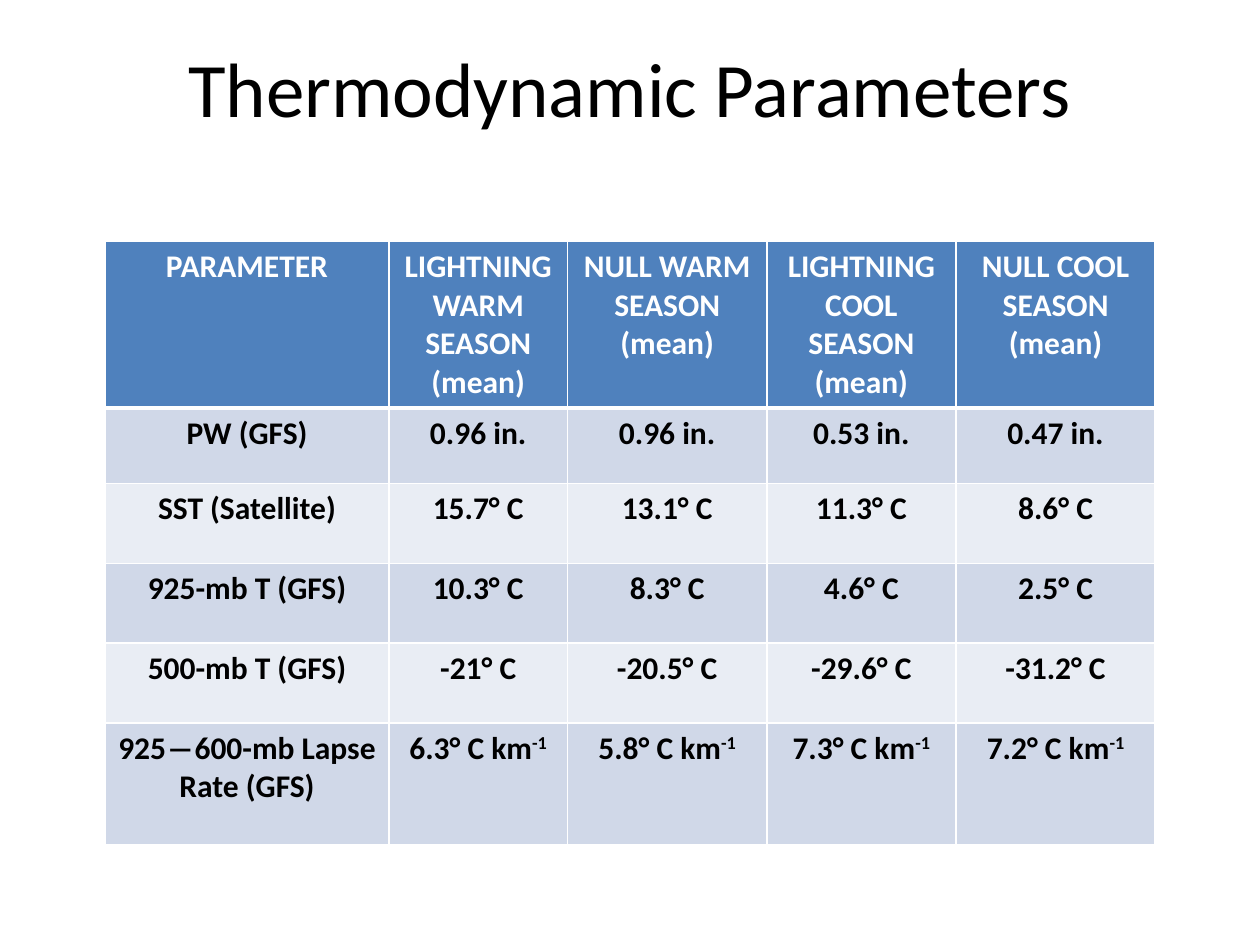
from lxml import etree
from pptx import Presentation
from pptx.dml.color import RGBColor
from pptx.enum.text import MSO_ANCHOR, PP_ALIGN
from pptx.oxml.ns import qn
from pptx.util import Cm, Pt

CENTER = PP_ALIGN.CENTER
MIDDLE = MSO_ANCHOR.MIDDLE
TITLE_ONLY = 5

WHITE, BLACK = "FFFFFF", "000000"
HEADER_BLUE = "4F81BD"
BANDS = ("D0D8E8", "E9EDF4")
THIN, THICK = 1, 3

HEADINGS = ["PARAMETER", "LIGHTNING WARM SEASON\n(mean)", "NULL WARM SEASON (mean)",
            "LIGHTNING COOL SEASON (mean)", "NULL COOL SEASON (mean)"]
# A caret starts the superscript part of a value
READINGS = [
    ["PW (GFS)", "0.96 in.", "0.96 in.", "0.53 in.", "0.47 in."],
    ["SST (Satellite)", "15.7° C", "13.1° C", "11.3° C", "8.6° C"],
    ["925-mb T (GFS)", "10.3° C", "8.3° C", "4.6° C", "2.5° C"],
    ["500-mb T (GFS)", "-21° C", "-20.5° C", "-29.6° C", "-31.2° C"],
    ["925―600-mb Lapse Rate (GFS)"]
    + [f"{rate}° C km^-1" for rate in ("6.3", "5.8", "7.3", "7.2")],
]
COLUMN_WIDTHS = [5.72, 3.6, 4.02, 3.81, 4.02]
ROW_HEIGHTS = [3.18, 1.52, 1.61, 1.61, 1.61, 2.46]


def color(hex_string):
    return RGBColor.from_string(hex_string)


class SlideBuilder:
    """Holds the text style and the current slide."""

    def __init__(self, slide, font_name="Calibri"):
        self.slide = slide
        self.font_name = font_name

    def add_text(self, paragraph, text, size, bold, text_color):
        paragraph.alignment = CENTER
        style = {"name": self.font_name, "size": Pt(size), "bold": bold}
        for position, part in enumerate(text.split("^")):
            run = paragraph.add_run()
            run.text = part
            for attribute, value in style.items():
                setattr(run.font, attribute, value)
            run.font.color.rgb = color(text_color)
            if position:
                run.font._element.set("baseline", "30000")

    def title(self, text, left, top, width, height):
        heading = self.slide.shapes.title
        box = {"left": left, "top": top, "width": width, "height": height}
        for attribute, value in box.items():
            setattr(heading, attribute, Cm(value))
        heading.text_frame.vertical_anchor = MIDDLE
        self.add_text(heading.text_frame.paragraphs[0], text, 44, False, BLACK)

    def borders(self, cell, widths):
        properties = cell._tc.get_or_add_tcPr()
        for side, width in widths.items():
            line = etree.SubElement(properties, qn(f"a:ln{side}"), w=str(Pt(width)))
            fill = etree.SubElement(line, qn("a:solidFill"))
            etree.SubElement(fill, qn("a:srgbClr"), val=WHITE)

    def cell(self, cell, text, fill, text_color, border_widths):
        self.borders(cell, border_widths)
        cell.fill.solid()
        cell.fill.fore_color.rgb = color(fill)
        frame = cell.text_frame
        for index, line in enumerate(text.split("\n")):
            paragraph = frame.add_paragraph() if index else frame.paragraphs[0]
            self.add_text(paragraph, line, 18, True, text_color)

    def table(self, rows, left, top, widths, heights):
        table = self.slide.shapes.add_table(
            len(rows), len(widths), Cm(left), Cm(top),
            Cm(sum(widths)), Cm(sum(heights))).table
        for column, width in zip(table.columns, widths):
            column.width = Cm(width)
        for row, height in zip(table.rows, heights):
            row.height = Cm(height)
        for r, texts in enumerate(rows):
            fill = BANDS[(r - 1) % 2] if r else HEADER_BLUE
            text_color = BLACK if r else WHITE
            # The line under the header is thick
            border_widths = {"L": THIN, "R": THIN,
                             "T": THICK if r == 1 else THIN,
                             "B": THICK if r == 0 else THIN}
            for c, text in enumerate(texts):
                self.cell(table.cell(r, c), text, fill, text_color, border_widths)


def main():
    presentation = Presentation()
    presentation.slide_width, presentation.slide_height = Cm(25.4), Cm(19.05)
    layout = presentation.slide_layouts[TITLE_ONLY]
    builder = SlideBuilder(presentation.slides.add_slide(layout))

    # Title
    builder.title("Thermodynamic Parameters", 1.27, 0.64, 22.86, 2.2)

    # Seasonal means of each parameter
    builder.table([HEADINGS] + READINGS, 2.12, 4.87, COLUMN_WIDTHS, ROW_HEIGHTS)

    presentation.save("out.pptx")


if __name__ == "__main__":
    main()
